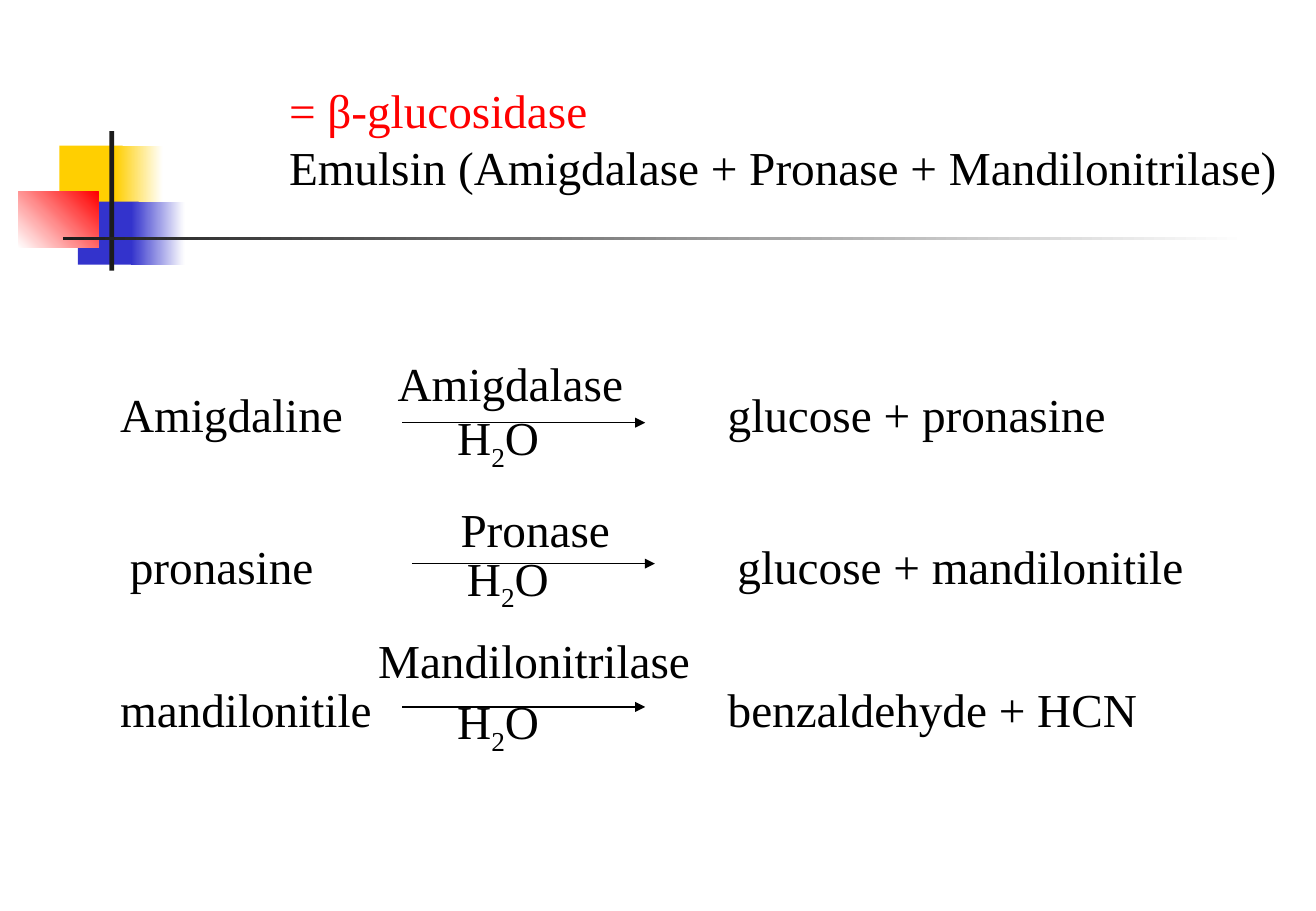
import pptx
import pptx.util
import pptx.dml.color
import pptx.enum.shapes
import pptx.enum.text
import pptx.oxml
import pptx.oxml.ns

RGBColor = pptx.dml.color.RGBColor
PP_ALIGN = pptx.enum.text.PP_ALIGN
MSO_ANCHOR = pptx.enum.text.MSO_ANCHOR

YELLOW = RGBColor(0xFF, 0xCF, 0x01)
BLUE = RGBColor(0x33, 0x33, 0xCC)
RED = RGBColor(0xFF, 0x00, 0x00)
CHARCOAL = RGBColor(0x1C, 0x1C, 0x1C)
BLACK = RGBColor(0x00, 0x00, 0x00)
WHITE = RGBColor(0xFF, 0xFF, 0xFF)

SLIDE_WIDTH = pptx.util.Inches(10.83)
SLIDE_HEIGHT = pptx.util.Inches(7.5)
LINE_HEIGHT = 7.6
ARROW_WIDTH = 18.47
PRODUCT_TAB = pptx.util.Inches(5)
TITLE_INDENT = pptx.util.Inches(1)

BODY_FONT = {"name": "Times New Roman", "size": pptx.util.Pt(28)}
TITLE_FRAME = {"word_wrap": True, "vertical_anchor": MSO_ANCHOR.MIDDLE}
EQUATION_FRAME = {**TITLE_FRAME, "margin_right": 0}
LABEL_FRAME = {"word_wrap": False, "vertical_anchor": MSO_ANCHOR.TOP}

ORNAMENT = [
    ((4.52, 16, 4.8, 6.93), [YELLOW], 0),
    ((8.77, 16, 3.6, 6.93), [YELLOW, WHITE], 0),
    ((5.91, 22.13, 4.62, 6.93), [BLUE], 0),
    ((9.97, 22.13, 4.06, 6.93), [BLUE, WHITE], 0),
    ((1.39, 21.07, 6.09, 6.13), [WHITE, RED], 45),
    ((8.31, 14.4, 0.37, 15.33), [CHARCOAL], 0),
    ((4.8, 26, 90.03, 0.4), [CHARCOAL, WHITE], 0),
]

REACTIONS = [
    ("Amigdaline", "glucose + pronasine", (30.56, 46.4), (41.6, 76.73),
     "Amigdalase", (29.27, 38.27, 19.02)),
    ("pronasine", "glucose + mandilonitile", (31.3, 61.87), (58.27, 81.9),
     "Pronase", (34.07, 54.27, 13.2)),
    ("mandilonitile", "benzaldehyde + HCN", (30.56, 77.6), (74, 79.13),
     "Mandilonitrilase", (27.79, 68.67, 25.58)),
]


def across(share):
    return round(SLIDE_WIDTH * share / 100)


def down(share):
    return round(SLIDE_HEIGHT * share / 100)


def place(left, top, width, height):
    return across(left), down(top), across(width), down(height)


def apply(target, values):
    for attribute, value in values.items():
        setattr(target, attribute, value)


def add_block(slide, area, colors, angle):
    block = slide.shapes.add_shape(
        pptx.enum.shapes.MSO_SHAPE.RECTANGLE, *place(*area))
    block.shadow.inherit = False
    block.line.fill.background()
    if len(colors) == 1:
        block.fill.solid()
        block.fill.fore_color.rgb = colors[0]
        return
    block.fill.gradient()
    block.fill.gradient_angle = angle
    for stop, color in zip(block.fill.gradient_stops, colors):
        stop.color.rgb = color


def add_text(slide, area, frame_format):
    frame = slide.shapes.add_textbox(*place(*area)).text_frame
    apply(frame, frame_format)
    return frame


def add_run(paragraph, text, color=BLACK):
    run = paragraph.add_run()
    run.text = text
    apply(run.font, BODY_FONT)
    run.font.color.rgb = color
    return run


def add_title(slide):
    frame = add_text(slide, (11.82, 8.27, 88.18, 13.87), TITLE_FRAME)
    synonym, mixture = frame.paragraphs[0], frame.add_paragraph()
    add_run(synonym, "= β-glucosidase", RED)
    add_run(mixture, "Emulsin (Amigdalase + Pronase + Mandilonitrilase)")
    for paragraph in (synonym, mixture):
        properties = paragraph._p.get_or_add_pPr()
        properties.set("marL", str(TITLE_INDENT))
        properties.set("indent", "0")


def add_equation(slide, area, substrate, product):
    paragraph = add_text(slide, area, EQUATION_FRAME).paragraphs[0]
    add_run(paragraph, f"{substrate}\t{product}")
    paragraph._p.get_or_add_pPr().append(pptx.oxml.parse_xml(
        f'<a:tabLst {pptx.oxml.ns.nsdecls("a")}>'
        f'<a:tab pos="{PRODUCT_TAB}" algn="l"/></a:tabLst>'))


def add_label(slide, area, parts):
    paragraph = add_text(slide, area, LABEL_FRAME).paragraphs[0]
    paragraph.alignment = PP_ALIGN.CENTER
    for text, baseline in parts:
        run = add_run(paragraph, text)
        if baseline:
            run.font._element.set("baseline", str(baseline))


def add_arrow(slide, left, top):
    arrow = slide.shapes.add_connector(
        pptx.enum.shapes.MSO_CONNECTOR.STRAIGHT,
        across(left), down(top), across(left + ARROW_WIDTH), down(top))
    arrow.line.color.rgb = BLACK
    arrow.line.width = pptx.util.Pt(0.75)
    namespace = pptx.oxml.ns.nsdecls("a")
    arrow.line._get_or_add_ln().append(
        pptx.oxml.parse_xml(f'<a:tailEnd {namespace} type="triangle"/>'))
    arrow._element.spPr.append(
        pptx.oxml.parse_xml(f'<a:effectLst {namespace}/>'))


def add_reaction(slide, substrate, product, arrow, equation, enzyme, label):
    left, top = arrow
    equation_top, equation_width = equation
    add_arrow(slide, left, top)
    add_equation(slide, (left - 22.34, equation_top, equation_width, LINE_HEIGHT),
                 substrate, product)
    add_label(slide, (*label, LINE_HEIGHT), [(enzyme, 0)])
    add_label(slide, (left + 3.14, top - 2.27, 8.31, LINE_HEIGHT),
              [("H", 0), ("2", -25000), ("O", 0)])


def main():
    deck = pptx.Presentation()
    apply(deck, {"slide_width": SLIDE_WIDTH, "slide_height": SLIDE_HEIGHT})
    slide = deck.slides.add_slide(deck.slide_layouts[6])
    for area, colors, angle in ORNAMENT:
        add_block(slide, area, colors, angle)
    add_title(slide)
    for reaction in REACTIONS:
        add_reaction(slide, *reaction)
    deck.save("out.pptx")


if __name__ == "__main__":
    main()
